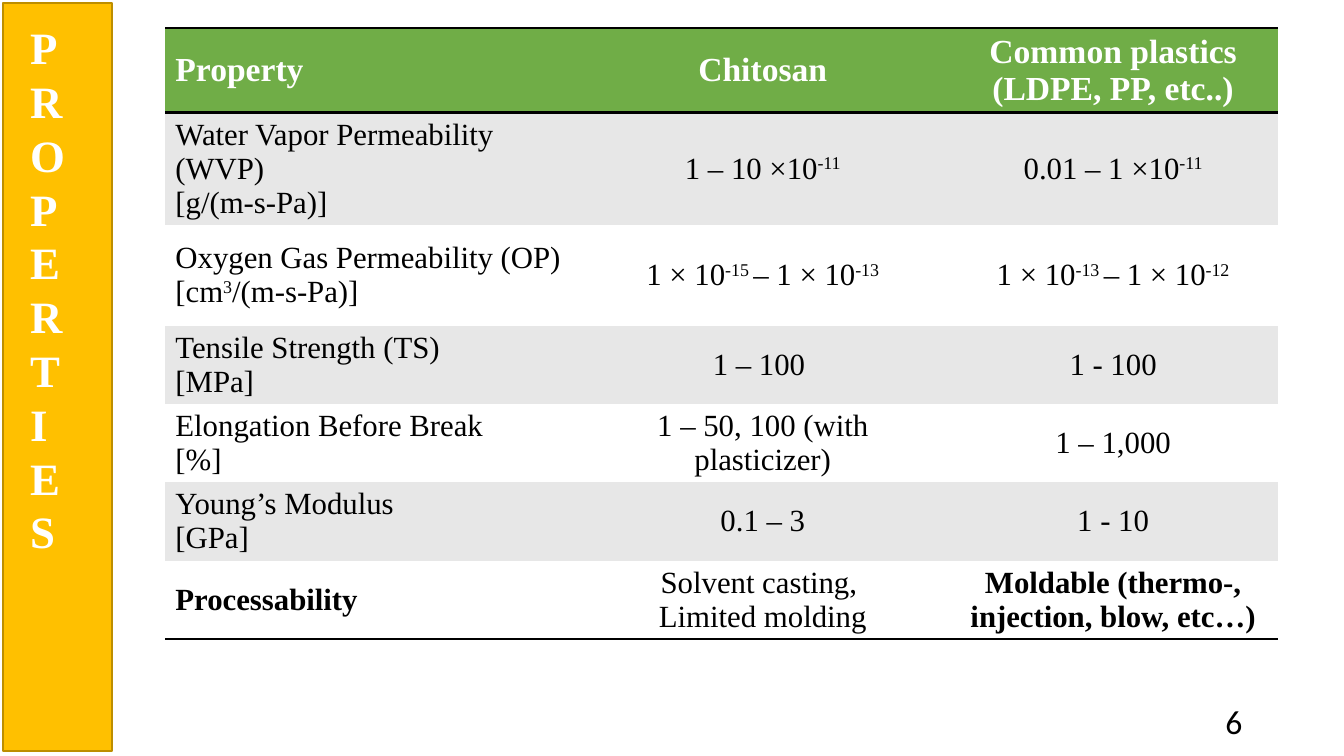
from lxml import etree
from pptx import Presentation
from pptx import util as u
from pptx.dml.color import RGBColor
from pptx.enum import shapes, text
from pptx.oxml import ns

COLORS = {
    "white": "FFFFFF", "black": "000000", "green": "70AD47",
    "band": "E7E7E7", "gold": "FFC000", "gold_line": "BD8E00",
}
SERIF = "Times New Roman"
NO_STYLE = "{2D5ABB26-0587-4C30-8999-92F81FD0307C}"
COL_WIDTHS = [4.09, 3.67, 3.28]
ROW_HEIGHTS = [0.7, 1, 1, 0.7, 0.7, 0.7, 0.66]
ROWS = [
    ["Property", "Chitosan", "Common plastics (LDPE, PP, etc..)"],
    ["Water Vapor Permeability (WVP)\n[g/(m-s-Pa)]",
     "1 – 10 ×10^-11", "0.01 – 1 ×10^-11"],
    ["Oxygen Gas Permeability (OP)\n[cm^3^/(m-s-Pa)]",
     "1 × 10^-15 ^– 1 × 10^-13", "1 × 10^-13 ^– 1 × 10^-12"],
    ["Tensile Strength (TS)\n[MPa]", "1 – 100 ", "1 - 100"],
    ["Elongation Before Break\n[%]",
     "1 – 50, 100 (with plasticizer)", "1 – 1,000"],
    ["Young’s Modulus\n[GPa]", "0.1 – 3", "1 - 10"],
    ["Processability", "Solvent casting, \nLimited molding",
     "Moldable (thermo-, injection, blow, etc…)"],
]
BOLD_BODY = {(6, 0), (6, 2)}


def rgb(name):
    return RGBColor.from_string(COLORS[name])


def sub(parent, tag, **attrs):
    return etree.SubElement(parent, ns.qn(tag), **attrs)


def style_run(r, size, color, font=SERIF, bold=False):
    r.font.size = u.Pt(size)
    r.font.name = font
    r.font.bold = bold
    r.font.color.rgb = rgb(color)


def fill_text(tf, content, align, **style):
    for i, line in enumerate(content.split("\n")):
        p = tf.paragraphs[0] if i == 0 else tf.add_paragraph()
        p.alignment = align
        for j, part in enumerate(line.split("^")):
            r = p.add_run()
            r.text = part
            style_run(r, **style)
            if j % 2:
                r._r.get_or_add_rPr().set("baseline", "30000")


def add_rule(cell, tag):
    ln = etree.Element(ns.qn(tag), w=str(u.Pt(2)))
    sub(sub(ln, "a:solidFill"), "a:srgbClr", val=COLORS["black"])
    tcPr = cell._tc.get_or_add_tcPr()
    tcPr.insert(len(tcPr.findall(ns.qn("a:lnT"))), ln)


def add_property_table(s, left, top):
    frame = s.shapes.add_table(
        len(ROWS), len(COL_WIDTHS), u.Inches(left), u.Inches(top),
        u.Inches(sum(COL_WIDTHS)), u.Inches(sum(ROW_HEIGHTS)))
    table = frame.table
    table.first_row = table.horz_banding = False
    table._tbl.tblPr.find(ns.qn("a:tableStyleId")).text = NO_STYLE
    for column, width in zip(table.columns, COL_WIDTHS):
        column.width = u.Inches(width)
    for row, height in zip(table.rows, ROW_HEIGHTS):
        row.height = u.Inches(height)
    for i, row in enumerate(ROWS):
        header = i == 0
        fill = "green" if header else "band" if i % 2 else "white"
        for j, content in enumerate(row):
            cell = table.cell(i, j)
            cell.vertical_anchor = text.MSO_ANCHOR.MIDDLE
            cell.fill.solid()
            cell.fill.fore_color.rgb = rgb(fill)
            fill_text(cell.text_frame, content,
                      text.PP_ALIGN.CENTER if j else text.PP_ALIGN.LEFT,
                      size=24 if header else 22,
                      color="white" if header else "black",
                      bold=header or (i, j) in BOLD_BODY)
            if header:
                add_rule(cell, "a:lnT")
            if header or i == len(ROWS) - 1:
                add_rule(cell, "a:lnB")


def add_text_shadow(r):
    rPr = r._r.get_or_add_rPr()
    effects = etree.Element(ns.qn("a:effectLst"))
    shadow = sub(effects, "a:outerShdw", blurRad=str(u.Pt(4)),
                 dist=str(u.Pt(4)), dir="2700000", algn="tl")
    color = sub(shadow, "a:srgbClr", val=COLORS["black"])
    sub(color, "a:alpha", val="40000")
    rPr.find(ns.qn("a:solidFill")).addnext(effects)


def add_sidebar(s, left, top, width, height):
    sp = s.shapes.add_shape(
        shapes.MSO_SHAPE.RECTANGLE, u.Inches(left), u.Inches(top),
        u.Inches(width), u.Inches(height))
    sp.shadow.inherit = False
    sp.fill.solid()
    sp.fill.fore_color.rgb = rgb("gold")
    sp.line.color.rgb = rgb("gold_line")
    sp.line.width = u.Pt(1)

    title = s.shapes.add_textbox(u.Inches(left + 0.17), u.Inches(top + 0.12),
                                 u.Inches(0.78), u.Inches(5.46))
    tf = title.text_frame
    tf.word_wrap = False
    tf.auto_size = text.MSO_AUTO_SIZE.SHAPE_TO_FIT_TEXT
    tf._txBody.bodyPr.set("vert", "wordArtVert")
    tf.text = "PROPERTIES"
    r = tf.paragraphs[0].runs[0]
    style_run(r, 32, "white", bold=True)
    r._r.get_or_add_rPr().set("spc", "-300")
    add_text_shadow(r)


def add_page_number(s, left, top, width, height):
    box = s.shapes.add_textbox(u.Inches(left), u.Inches(top),
                               u.Inches(width), u.Inches(height))
    tf = box.text_frame
    tf.word_wrap = True
    tf.vertical_anchor = text.MSO_ANCHOR.MIDDLE
    tf.text = "6"
    p = tf.paragraphs[0]
    p.alignment = text.PP_ALIGN.RIGHT
    style_run(p.runs[0], 24, "black", font="Calibri")


def main():
    prs = Presentation()
    prs.slide_width, prs.slide_height = u.Inches(13.33), u.Inches(7.5)
    s = prs.slides.add_slide(prs.slide_layouts[6])
    add_property_table(s, 1.64, 0.28)
    add_sidebar(s, 0.03, 0.03, 1.08, 7.42)
    add_page_number(s, 9.42, 6.95, 3, 0.4)
    prs.save("out.pptx")


if __name__ == "__main__":
    main()
